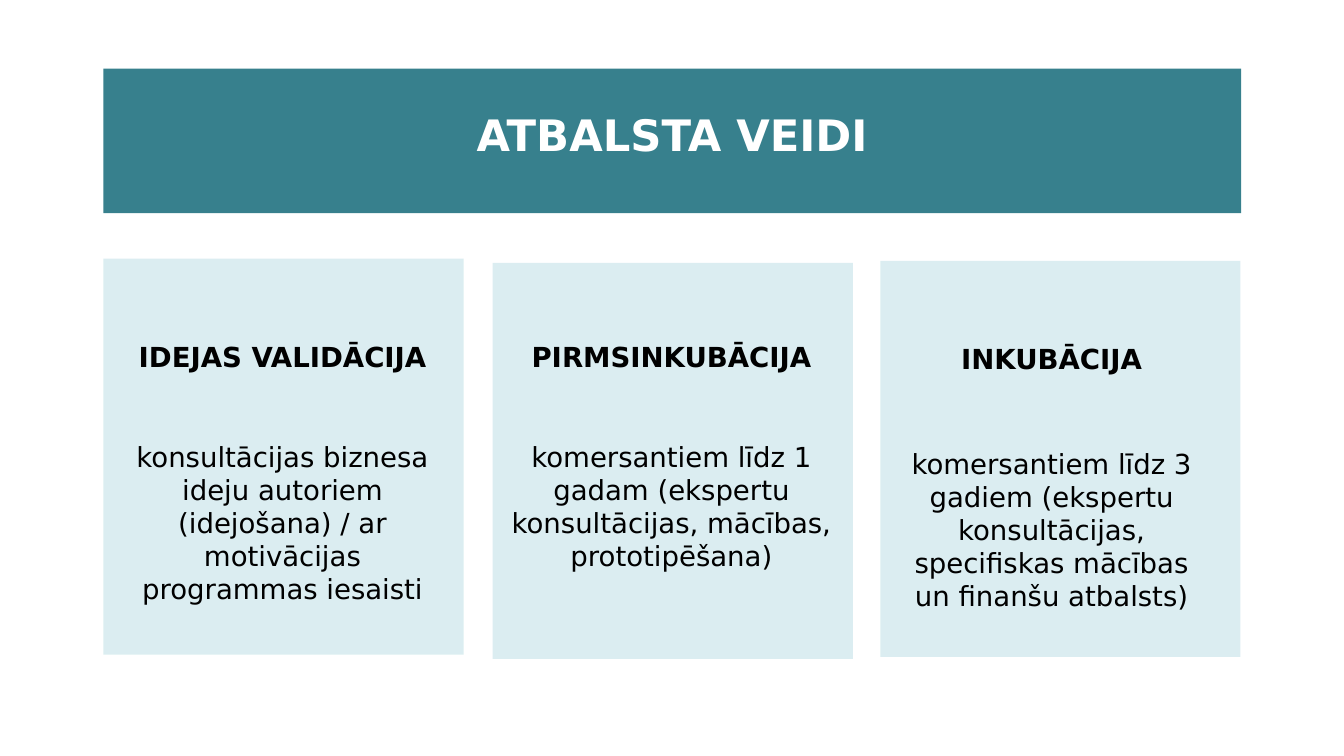
from lxml import etree
from pptx import Presentation
from pptx.dml.color import RGBColor
from pptx.enum import shapes, text
from pptx.oxml.ns import qn
from pptx.util import Pt

FONT = "DejaVu Sans"
TEAL = RGBColor(0x37, 0x80, 0x8D)
AQUA = RGBColor(0x4C, 0xA9, 0xB9)
WHITE = RGBColor(0xFF, 0xFF, 0xFF)
BLACK = RGBColor(0x00, 0x00, 0x00)

CARD_WIDTH, CARD_HEIGHT = 365.8, 402.5
SUPPORT_TYPES = [
    ((105.1, 262.8), (13.7, 78.8, 336.2), 68, "IDEJAS VALIDĀCIJA",
     "konsultācijas biznesa ideju autoriem (idejošana) / ar motivācijas programmas iesaisti"),
    ((500.4, 267.1), (-1.4, 74.5, 365.8), 68, "PIRMSINKUBĀCIJA",
     "komersantiem līdz 1 gadam (ekspertu konsultācijas, mācības, prototipēšana)"),
    ((894.2, 265), (13, 78.6, 321.8), 73, "INKUBĀCIJA",
     "komersantiem līdz 3 gadiem (ekspertu konsultācijas, specifiskas mācības un finanšu atbalsts)"),
]


def add_panel(slide, box, color, opacity=100):
    panel = slide.shapes.add_shape(shapes.MSO_SHAPE.RECTANGLE, *map(Pt, box))
    panel.shadow.inherit = False
    panel.fill.solid()
    panel.fill.fore_color.rgb = color
    panel.line.fill.background()
    if opacity < 100:
        tint = panel.fill._xPr.find(qn("a:solidFill"))[0]
        etree.SubElement(tint, qn("a:alpha")).set("val", str(opacity * 1000))


def add_words(slide, box, lines, size, color, gap=0):
    frame = slide.shapes.add_textbox(*map(Pt, box)).text_frame
    frame.word_wrap = True
    for index, (words, bold) in enumerate(lines):
        paragraph = frame.add_paragraph() if index else frame.paragraphs[0]
        paragraph.alignment = text.PP_ALIGN.CENTER
        if index:
            paragraph.space_before = Pt(gap)
        run = paragraph.add_run()
        run.text = words
        run.font.name = FONT
        run.font.size = Pt(size)
        run.font.bold = bold
        run.font.color.rgb = color


def add_banner(slide, box, title):
    left, top, width, height = box
    add_panel(slide, box, TEAL)
    add_words(slide, (left + 135, top + 36.5, width - 270, 60.5),
              [(title, True)], 44, WHITE)


def add_card(slide, box, text_place, gap, heading, description):
    left, top, width, height = box
    text_left, text_top, text_width = text_place
    add_panel(slide, box, AQUA, opacity=20)
    add_words(slide, (left + text_left, top + text_top, text_width, 280),
              [(heading, True), (description, False)], 28, BLACK, gap)


def main():
    deck = Presentation()
    deck.slide_width, deck.slide_height = Pt(1365.1), Pt(768.2)
    slide = deck.slides.add_slide(deck.slide_layouts[6])
    add_banner(slide, (105.1, 69.8, 1155.6, 146.9), "ATBALSTA VEIDI")
    for corner, *content in SUPPORT_TYPES:
        add_card(slide, (*corner, CARD_WIDTH, CARD_HEIGHT), *content)
    deck.save("out.pptx")


if __name__ == "__main__":
    main()
